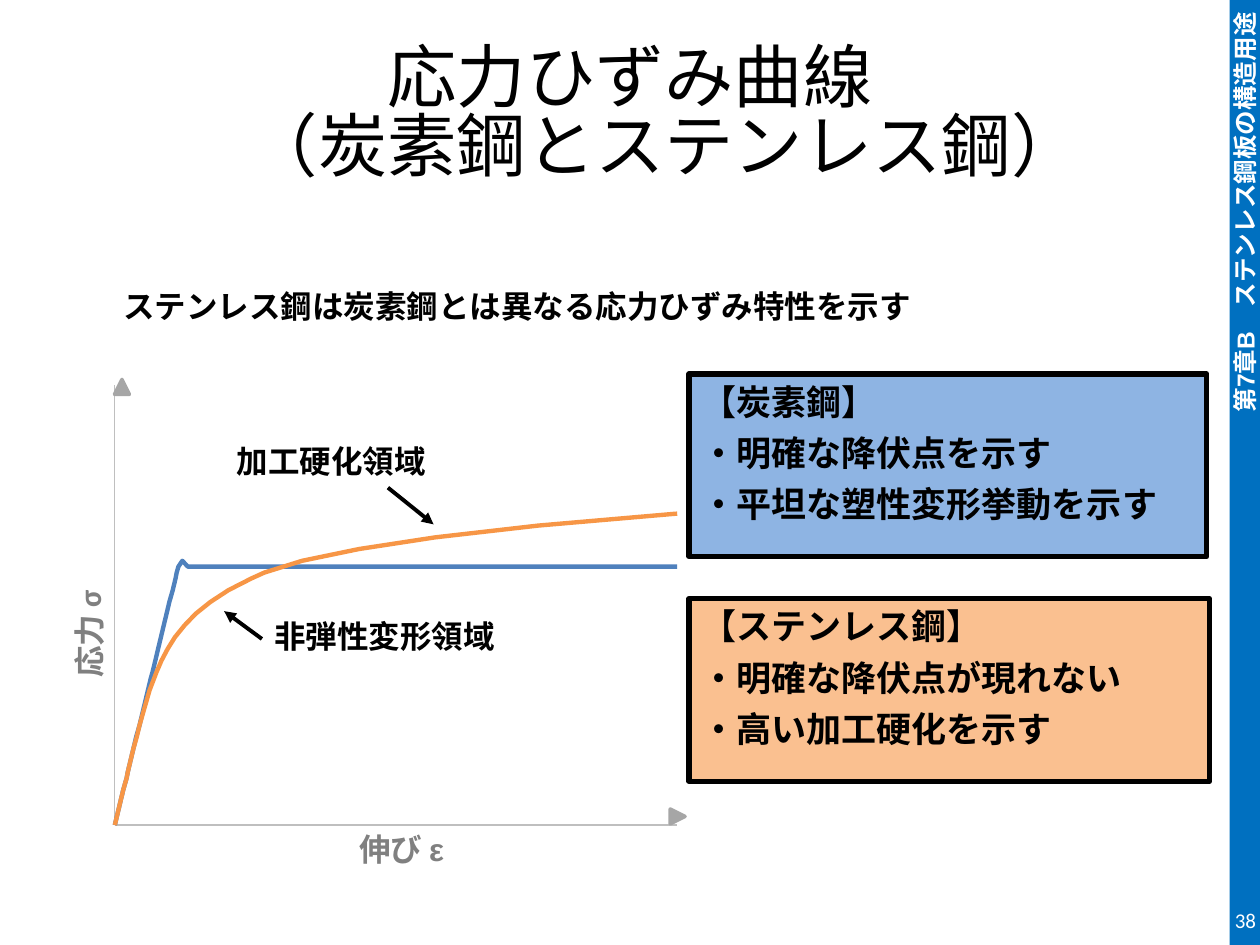
from dataclasses import dataclass
from typing import Optional

import lxml.etree
import pptx
import pptx.chart.data
import pptx.dml.color
import pptx.enum.chart
import pptx.enum.shapes
import pptx.enum.text
import pptx.oxml
import pptx.oxml.ns
import pptx.util

Cm, Pt = pptx.util.Cm, pptx.util.Pt
RGB = pptx.dml.color.RGBColor.from_string
qn = pptx.oxml.ns.qn
ALIGN = pptx.enum.text.PP_ALIGN
ANCHOR = pptx.enum.text.MSO_ANCHOR
SHAPE = pptx.enum.shapes.MSO_SHAPE


@dataclass(frozen=True)
class Theme:
    black: str = "000000"
    white: str = "FFFFFF"
    sidebar: str = "0070C0"
    axis: str = "BFBFBF"
    axis_tip: str = "A6A6A6"
    axis_title: str = "808080"
    carbon: str = "4F81BD"
    carbon_box: str = "8EB4E3"
    stainless: str = "F79646"
    stainless_box: str = "FAC090"
    latin: str = "Arial"
    body: str = "Calibri"
    heading: str = "Noto Sans CJK JP"
    title_size: float = 39.6
    box_size: float = 20
    label_size: float = 18
    sidebar_size: float = 14
    number_size: float = 12


T = Theme()


@dataclass(frozen=True)
class Box:
    left: float
    top: float
    width: float
    height: float

    def cm(self) -> tuple:
        return Cm(self.left), Cm(self.top), Cm(self.width), Cm(self.height)


@dataclass(frozen=True)
class Style:
    size: float
    font: str
    color: str = T.black
    bold: bool = True


@dataclass(frozen=True)
class Label:
    box: Box
    runs: tuple
    color: str = T.black
    font: str = T.body
    rotation: float = 0


@dataclass(frozen=True)
class Summary:
    box: Box
    fill: str
    lines: tuple


@dataclass(frozen=True)
class Arrow:
    start: tuple
    end: tuple


def add_run(p, text: str, style: Style) -> None:
    r = p.add_run()
    r.text = text
    f = r.font
    f.size, f.name, f.bold = Pt(style.size), style.font, style.bold
    f.color.rgb = RGB(style.color)


def add_text_box(s, box: Box):
    sp = s.shapes.add_textbox(*box.cm())
    sp.text_frame.word_wrap = True
    return sp


def add_filled(s, kind, box: Box, fill: str, line: Optional[str] = None, weight: float = 0):
    sp = s.shapes.add_shape(kind, *box.cm())
    sp.shadow.inherit = False
    sp.fill.solid()
    sp.fill.fore_color.rgb = RGB(fill)
    if line:
        sp.line.color.rgb = RGB(line)
        sp.line.width = Pt(weight)
    else:
        sp.line.fill.background()
    return sp


def add_label(s, label: Label) -> None:
    sp = add_text_box(s, label.box)
    sp.rotation = label.rotation
    p = sp.text_frame.paragraphs[0]
    for text, font in label.runs:
        add_run(p, text, Style(T.label_size, font, label.color))


def add_summary(s, summary: Summary) -> None:
    sp = add_filled(s, SHAPE.RECTANGLE, summary.box, summary.fill, T.black, 3)
    tf = sp.text_frame
    tf.word_wrap = True
    tf.vertical_anchor = ANCHOR.TOP
    for i, line in enumerate(summary.lines):
        p = tf.add_paragraph() if i else tf.paragraphs[0]
        p.alignment = ALIGN.LEFT
        if i:
            p.space_before = Pt(5.3)
        add_run(p, line, Style(T.box_size, T.latin))


def add_arrow(s, arrow: Arrow) -> None:
    ends = [Cm(v) for v in arrow.start + arrow.end]
    c = s.shapes.add_connector(pptx.enum.shapes.MSO_CONNECTOR.STRAIGHT, *ends)
    c.line.color.rgb = RGB(T.black)
    c.line.width = Pt(2.25)
    lxml.etree.SubElement(c.line._get_or_add_ln(), qn("a:tailEnd"), type="triangle")
    lxml.etree.SubElement(c._element.spPr, qn("a:effectLst"))


def stainless_strain(stress: float) -> float:
    """Elastic part plus a power-law plastic part, steeper above the proof stress."""
    exponent = 6.2 if stress < 44 else 8.4
    return round(stress / 39000 + 0.0018 * (stress / 44) ** exponent, 5)


def curve_data():
    stresses = [round(100 * i / 53) for i in range(54)]
    hardened = [0.02, 0.02, 0.03, 0.04, 0.04, 0.05, 0.07, 0.08, 0.1, 0.11, 0.13, 0.15,
                0.17, 0.2, 0.23, 0.25, 0.29, 0.32, 0.35, 0.39, 0.43, 0.48, 0.52, 0.57]
    stainless = [stainless_strain(v) for v in stresses[:-len(hardened)]] + hardened
    elastic = [(round(v / 39000, 5), v) for v in stresses if v <= 43]
    plateau = [0.0013, 0.0014, 0.0015, 0.0016, 0.0017, 0.0018, 0.003, 0.005, 0.01, 0.015]
    carbon = elastic + [(0.00113, 44), (0.0012, 45)] + [(x, 44) for x in plateau]
    data = pptx.chart.data.XyChartData()
    for name, points in (("Series 1", zip(stainless, stresses)), ("Series 2", carbon)):
        series = data.add_series(name)
        for x, y in points:
            series.add_data_point(x, y)
    return data


def set_plot_area(chart, **fractions: float) -> None:
    """Fix the inner plot area as fractions of the chart."""
    area = chart._chartSpace.chart.plotArea
    for old in area.findall(qn("c:layout")):
        area.remove(old)
    layout = lxml.etree.Element(qn("c:layout"))
    manual = lxml.etree.SubElement(layout, qn("c:manualLayout"))
    settings = {"layoutTarget": "inner", "xMode": "edge", "yMode": "edge", **fractions}
    for tag, value in settings.items():
        lxml.etree.SubElement(manual, qn(f"c:{tag}"), val=str(value))
    area.insert(0, layout)


def add_curves(s, box: Box) -> None:
    kind = pptx.enum.chart.XL_CHART_TYPE.XY_SCATTER_SMOOTH_NO_MARKERS
    chart = s.shapes.add_chart(kind, *box.cm(), curve_data()).chart
    chart.has_legend = chart.has_title = False
    chart.font.size, chart.font.name = Pt(10), T.body
    chart.font.color.rgb = RGB(T.black)
    set_plot_area(chart, x=0.02, y=0.02, w=0.96, h=0.96)
    for axis, top in ((chart.category_axis, 0.01), (chart.value_axis, 75)):
        axis.minimum_scale, axis.maximum_scale = 0, top
        axis.has_major_gridlines = False
        axis.major_tick_mark = axis.minor_tick_mark = pptx.enum.chart.XL_TICK_MARK.NONE
        axis.tick_label_position = pptx.enum.chart.XL_TICK_LABEL_POSITION.NONE
        axis.format.line.color.rgb = RGB(T.axis)
        axis.format.line.width = Pt(0.75)
    for series, color in zip(chart.plots[0].series, (T.stainless, T.carbon)):
        series.smooth = True
        series.marker.style = pptx.enum.chart.XL_MARKER_STYLE.NONE
        series.format.line.color.rgb = RGB(color)
        series.format.line.width = Pt(2.5)


def add_title(s) -> None:
    tf = add_text_box(s, Box(1.27, 0.76, 22.86, 3.18)).text_frame
    tf.vertical_anchor = ANCHOR.MIDDLE
    p = tf.paragraphs[0]
    p.alignment, p.line_spacing = ALIGN.CENTER, 0.82
    style = Style(T.title_size, T.heading, bold=False)
    add_run(p, "応力ひずみ曲線", style)
    p.add_line_break()
    add_run(p, "\u3000（炭素鋼とステンレス鋼）".replace("\u3000", "　"), style)
    for r in p.runs:
        lxml.etree.SubElement(r.font._element, qn("a:ea"), typeface=T.heading)


def add_sidebar(s) -> None:
    tf = add_filled(s, SHAPE.RECTANGLE, Box(24.79, 0, 0.61, 19.05), T.sidebar).text_frame
    tf._txBody.bodyPr.set("vert", "vert270")
    tf.vertical_anchor = ANCHOR.MIDDLE
    p = tf.paragraphs[0]
    p.alignment = ALIGN.RIGHT
    add_run(p, "第7章B　ステンレス鋼板の構造用途", Style(T.sidebar_size, T.latin, T.white))


def add_slide_number(s) -> None:
    tf = add_text_box(s, Box(24.13, 18.03, 1.19, 1.02)).text_frame
    tf.margin_left = tf.margin_right = tf.margin_top = tf.margin_bottom = 0
    tf.vertical_anchor = ANCHOR.MIDDLE
    p = tf.paragraphs[0]
    p.alignment = ALIGN.RIGHT
    add_run(p, "38", Style(T.number_size, T.body, T.white, False))


LABELS = (
    Label(Box(2.24, 5.66, 18.97, 1.02),
          (("ステンレス鋼は炭素鋼とは異なる応力ひずみ特性を示す", T.latin),)),
    Label(Box(5.28, 12.32, 5.99, 1.02), (("非弾性変形領域", T.body),)),
    Label(Box(4.52, 8.79, 5.99, 1.02), (("加工硬化領域", T.body),)),
    Label(Box(6.99, 16.61, 2.62, 1.07), (("伸び ", T.body), ("ε", T.latin)), T.axis_title),
    Label(Box(0.48, 12.09, 2.62, 1.02), (("応力 σ", T.body),), T.axis_title, rotation=270),
)
SUMMARIES = (
    Summary(Box(13.89, 12.07, 10.49, 3.68), T.stainless_box,
            ("【ステンレス鋼】", "・明確な降伏点が現れない", "・高い加工硬化を示す")),
    Summary(Box(13.89, 7.54, 10.44, 3.68), T.carbon_box,
            ("【炭素鋼】", "・明確な降伏点を示す", "・平坦な塑性変形挙動を示す")),
)
ARROWS = (Arrow((5.28, 12.88), (4.52, 12.32)), Arrow((7.82, 9.83), (8.74, 10.57)))
AXIS_TIPS = ((Box(13.51, 16.31, 0.3, 0.3), 90), (Box(2.31, 7.65, 0.3, 0.3), 0))


def main() -> None:
    prs = pptx.Presentation()
    prs.slide_width, prs.slide_height = Cm(25.4), Cm(19.05)
    s = prs.slides.add_slide(prs.slide_layouts[6])
    add_sidebar(s)
    for summary in SUMMARIES:
        add_summary(s, summary)
    add_curves(s, Box(2.08, 7.57, 11.81, 9.25))
    for arrow in ARROWS:
        add_arrow(s, arrow)
    for box, rotation in AXIS_TIPS:
        tip = add_filled(s, SHAPE.ISOSCELES_TRIANGLE, box, T.axis_tip, T.axis_tip, 2)
        tip.rotation = rotation
    for label in LABELS:
        add_label(s, label)
    add_title(s)
    add_slide_number(s)
    prs.save("out.pptx")


if __name__ == "__main__":
    main()
